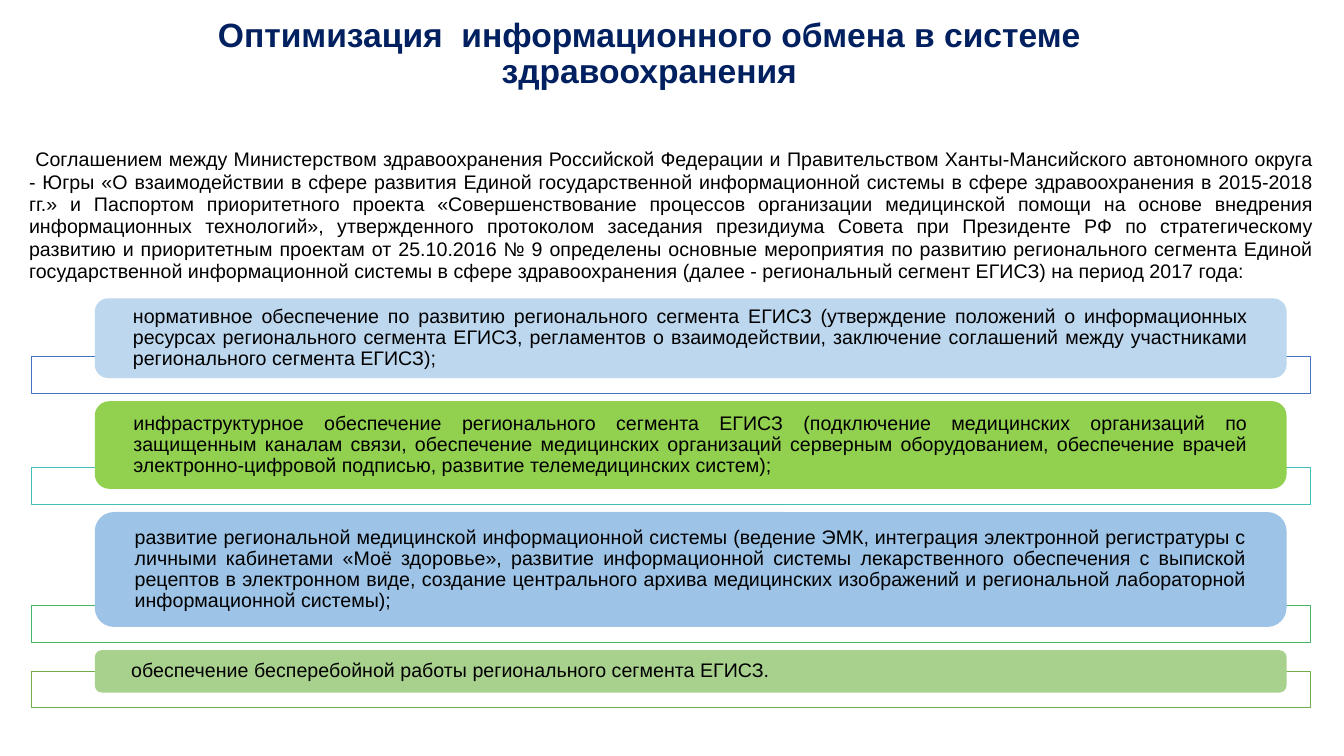
from dataclasses import dataclass

import lxml.etree
import pptx
import pptx.dml.color
import pptx.enum.shapes
import pptx.enum.text
import pptx.oxml.ns
import pptx.util

Inches = pptx.util.Inches
Align = pptx.enum.text.PP_ALIGN
Anchor = pptx.enum.text.MSO_ANCHOR
Preset = pptx.enum.shapes.MSO_SHAPE


@dataclass(frozen=True)
class Theme:
    """Colours, font and type sizes of the slide."""
    font: str = "Arial"
    title_size: int = 24
    body_size: int = 14
    title_color: str = "002060"
    text_color: str = "000000"
    bar_fill: str = "FFFFFF"
    bar_opacity: int = 90
    bar_line_width: float = 0.5


THEME = Theme()

TITLE = "Оптимизация  информационного обмена в системе здравоохранения"
INTRO = (
    " Соглашением между Министерством здравоохранения Российской Федерации и Правительством "
    "Ханты-Мансийского автономного округа - Югры «О взаимодействии в сфере развития Единой "
    "государственной информационной системы в сфере здравоохранения в 2015-2018 гг.» и Паспортом "
    "приоритетного проекта «Совершенствование процессов организации медицинской помощи на основе "
    "внедрения информационных технологий», утвержденного протоколом заседания президиума Совета "
    "при Президенте РФ по стратегическому развитию и приоритетным проектам от 25.10.2016 № 9 "
    "определены основные мероприятия по развитию регионального сегмента Единой государственной "
    "информационной системы в сфере здравоохранения (далее - региональный сегмент ЕГИСЗ) на период "
    "2017 года:"
)
MEASURES = [
    (0.79, "BDD7EE", "4472C4", Align.JUSTIFY,
     "нормативное обеспечение по развитию регионального сегмента ЕГИСЗ (утверждение положений о "
     "информационных ресурсах регионального сегмента ЕГИСЗ, регламентов о взаимодействии, "
     "заключение соглашений между участниками регионального сегмента ЕГИСЗ);"),
    (0.87, "92D050", "43BEB9", Align.JUSTIFY,
     "инфраструктурное обеспечение регионального сегмента ЕГИСЗ (подключение медицинских "
     "организаций по защищенным каналам связи, обеспечение медицинских организаций серверным "
     "оборудованием, обеспечение врачей электронно-цифровой подписью, развитие телемедицинских "
     "систем);"),
    (1.14, "9DC3E6", "45B664", Align.JUSTIFY,
     "развитие региональной медицинской информационной системы (ведение ЭМК, интеграция "
     "электронной регистратуры с личными кабинетами «Моё здоровье», развитие информационной "
     "системы лекарственного обеспечения с выпиской рецептов в электронном виде, создание "
     "центрального архива медицинских изображений и региональной лабораторной информационной "
     "системы);"),
    (0.42, "A9D18E", "70AD47", Align.LEFT,
     "обеспечение бесперебойной работы регионального сегмента ЕГИСЗ."),
]


def rgb(value):
    """Turn a hex string into a colour."""
    return pptx.dml.color.RGBColor.from_string(value)


def write_text(shape, text, size, color, alignment, line_spacing, anchor, bold=False):
    """Write one formatted paragraph into a shape."""
    frame = shape.text_frame
    frame.word_wrap = True
    frame.vertical_anchor = anchor
    paragraph = frame.paragraphs[0]
    paragraph.alignment = alignment
    paragraph.line_spacing = line_spacing
    run = paragraph.add_run()
    run.text = text
    run.font.name = THEME.font
    run.font.size = pptx.util.Pt(size)
    run.font.bold = bold
    run.font.color.rgb = rgb(color)


def add_block(slide, preset, left, top, width, height, fill):
    """Add a filled shape without shadow or outline."""
    shape = slide.shapes.add_shape(preset, left, top, width, height)
    shape.shadow.inherit = False
    shape.fill.solid()
    shape.fill.fore_color.rgb = rgb(fill)
    shape.line.fill.background()
    return shape


def add_title(slide, left, top, width, height):
    """Place the centred heading in its box."""
    box = slide.shapes.add_textbox(left, top, width, height)
    write_text(box, TITLE, THEME.title_size, THEME.title_color, Align.CENTER, 0.9,
               Anchor.MIDDLE, bold=True)


def add_intro(slide, left, top, width, height):
    """Place the justified introduction in its box."""
    box = slide.shapes.add_textbox(left, top, width, height)
    write_text(box, INTRO, THEME.body_size, THEME.text_color, Align.JUSTIFY, 0.95, Anchor.TOP)


def add_bar(slide, left, top, width, height, line_color):
    """Add the translucent outlined bar behind a card."""
    bar = add_block(slide, Preset.RECTANGLE, left, top, width, height, THEME.bar_fill)
    bar.line.color.rgb = rgb(line_color)
    bar.line.width = pptx.util.Pt(THEME.bar_line_width)
    qualified = pptx.oxml.ns.qn
    color = bar.fill._xPr.find(qualified("a:solidFill")).find(qualified("a:srgbClr"))
    alpha = lxml.etree.SubElement(color, qualified("a:alpha"))
    alpha.set("val", str(THEME.bar_opacity * 1000))


def add_card(slide, left, top, width, height, fill, alignment, text):
    """Add a rounded card with its text."""
    card = add_block(slide, Preset.ROUNDED_RECTANGLE, left, top, width, height, fill)
    frame = card.text_frame
    frame.margin_left = frame.margin_right = Inches(0.34)
    frame.margin_top = frame.margin_bottom = 0
    write_text(card, text, THEME.body_size, THEME.text_color, alignment, 0.9, Anchor.MIDDLE)


def add_measures(slide, left, top, width):
    """Stack the measures, each a card over a bar that shows below it."""
    bar_height = Inches(0.36)
    bar_overhang = Inches(0.15)
    card_gap = Inches(0.23)
    card_indent = Inches(0.63)
    card_width = width - card_indent - Inches(0.24)
    for card_height, fill, line_color, alignment, text in MEASURES:
        height = Inches(card_height)
        bar_top = top + height + bar_overhang - bar_height
        add_bar(slide, left, bar_top, width, bar_height, line_color)
        add_card(slide, left + card_indent, top, card_width, height, fill, alignment, text)
        top += height + card_gap


def main():
    """Build the slide and save the presentation."""
    presentation = pptx.Presentation()
    presentation.slide_width = Inches(13.33)
    presentation.slide_height = Inches(7.5)
    slide = presentation.slides.add_slide(presentation.slide_layouts[6])
    add_title(slide, Inches(1.45), Inches(-0.05), Inches(9.98), Inches(1.18))
    add_intro(slide, Inches(0.19), Inches(1.43), Inches(12.94), Inches(1.44))
    add_measures(slide, Inches(0.31), Inches(2.96), Inches(12.69))
    presentation.save("out.pptx")


if __name__ == "__main__":
    main()
